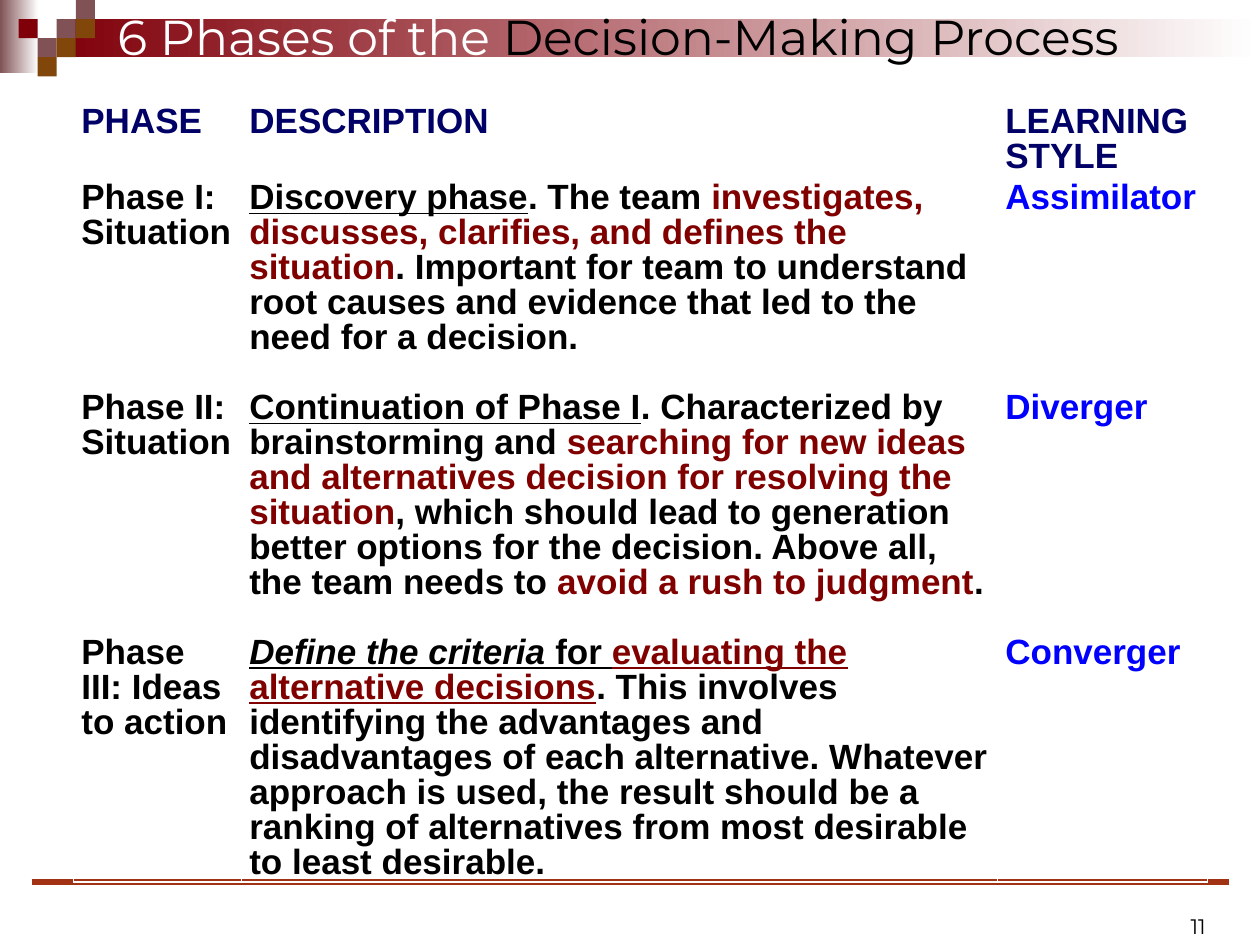
"""Build the slide on the phases of the decision-making process."""
from typing import NamedTuple

from lxml.etree import SubElement as SubEl
from pptx import Presentation as Deck
from pptx.dml.color import RGBColor as Color
from pptx.enum.shapes import MSO_CONNECTOR as Link, MSO_SHAPE as Shape
from pptx.enum.text import MSO_ANCHOR as Anchor, PP_ALIGN as Align
from pptx.oxml.ns import qn
from pptx.util import Pt

BLACK = Color(0, 0, 0)
WHITE = Color(255, 255, 255)
NAVY = Color(0, 0, 0x66)
BLUE = Color(0, 0, 255)
RED = Color(0x80, 0, 0)
WINE = Color(0x80, 0, 0x0A)
MAUVE = Color(0x80, 0x52, 0x55)
BROWN = Color(0x81, 0x46, 0x0A)
RUST = Color(0xA1, 0x32, 0x14)

SIDE = 10.9
LEFT = 10.6
WIDTHS = (96, 432, 120)
HEIGHTS = (43.5, 120, 140, 140)
BODY = {"name": "Arial", "size": Pt(20), "bold": True}


class Box(NamedTuple):
    x: float
    y: float
    w: float
    h: float


class Run(NamedTuple):
    text: str
    color: Color = BLACK
    style: dict = {}


class Tile(NamedTuple):
    col: int
    row: int
    color: Color


class Phase(NamedTuple):
    name: str
    about: list[Run]
    style: str


LINED = {"underline": True}
TILES = [
    Tile(2, 1, MAUVE), Tile(3, 0, MAUVE), Tile(3, 1, BROWN), Tile(1, 2, MAUVE),
    Tile(0, 1, WINE), Tile(2, 2, BROWN), Tile(1, 3, BROWN),
]
FADES = [(Box(0, 0, 22, 42), MAUVE), (Box(32.4, 10.8, 687.6, 21.6), WINE)]
HEADS = ("PHASE", "DESCRIPTION", "LEARNING STYLE")
PHASES = [
    Phase("Phase I: Situation", [
        Run("Discovery phase", style=LINED),
        Run(". The team "),
        Run("investigates, discusses, clarifies, and defines the situation", RED),
        Run(". Important for team to understand root causes and evidence "
            "that led to the need for a decision."),
    ], "Assimilator"),
    Phase("Phase II: Situation", [
        Run("Continuation of Phase I", style=LINED),
        Run(". Characterized by brainstorming and "),
        Run("searching for new ideas and alternatives decision for "
            "resolving the situation", RED),
        Run(", which should lead to generation better options for the "
            "decision. Above all, the team needs to "),
        Run("avoid a rush to judgment", RED),
        Run("."),
    ], "Diverger"),
    Phase("Phase III: Ideas to action", [
        Run("Define the criteria ", style={"italic": True, **LINED}),
        Run("for ", style=LINED),
        Run("evaluating the alternative decisions", RED, LINED),
        Run(". This involves identifying the advantages and disadvantages of "
            "each alternative. Whatever approach is used, the result should be "
            "a ranking of alternatives from most desirable to least desirable."),
    ], "Converger"),
]


def apply(item, values: dict) -> None:
    """Set each named attribute of the item."""
    for key, value in values.items():
        setattr(item, key, value)


def write(para, runs: list[Run], font: dict) -> None:
    """Add styled runs to a paragraph."""
    for part in runs:
        run = para.add_run()
        run.text = part.text
        apply(run.font, {**font, **part.style})
        run.font.color.rgb = part.color


def block(shapes, box: Box, color: Color, fade: bool = False) -> None:
    """Draw a rectangle, plain or fading to white."""
    rect = shapes.add_shape(Shape.RECTANGLE, *map(Pt, box))
    rect.shadow.inherit = False
    rect.line.fill.background()
    if fade:
        rect.fill.gradient()
        rect.fill.gradient_angle = 0
        for stop, tone in zip(rect.fill.gradient_stops, (color, WHITE)):
            stop.color.rgb = tone
    else:
        rect.fill.solid()
        rect.fill.fore_color.rgb = color


def label(shapes, box: Box, runs: list[Run], size: float, align: Align) -> None:
    """Draw a text box set to its lower edge."""
    frame = shapes.add_textbox(*map(Pt, box)).text_frame
    apply(frame, {"word_wrap": True, "vertical_anchor": Anchor.BOTTOM})
    para = frame.paragraphs[0]
    para.alignment = align
    write(para, runs, {"name": "Montserrat", "size": Pt(size)})


def rule(shapes, x: float, y: float, end: float) -> None:
    """Draw the level line at the foot."""
    line = shapes.add_connector(Link.STRAIGHT, Pt(x), Pt(y), Pt(end), Pt(y))
    line.line.width = Pt(3)
    line.line.color.rgb = RUST
    SubEl(line._element.spPr, qn("a:effectLst"))


def chart(shapes, rows: list[list[list[Run]]]) -> None:
    """Draw the table of phases."""
    box = Box(42, 60.5, sum(WIDTHS), sum(HEIGHTS))
    grid = shapes.add_table(len(rows), len(WIDTHS), *map(Pt, box)).table
    apply(grid, {"first_row": False, "horz_banding": False})
    for col, width in zip(grid.columns, WIDTHS):
        col.width = Pt(width)
    for row, height, cells in zip(grid.rows, HEIGHTS, rows):
        row.height = Pt(height)
        for cell, runs in zip(row.cells, cells):
            cell.fill.background()
            apply(cell, {"margin_left": Pt(4.5), "margin_right": Pt(4.5),
                         "margin_top": 0, "margin_bottom": 0})
            para = cell.text_frame.paragraphs[0]
            para.line_spacing = Pt(20)
            write(para, runs, BODY)


def main() -> None:
    """Build and save the slide."""
    deck = Deck()
    apply(deck, {"slide_width": Pt(720), "slide_height": Pt(540)})
    shapes = deck.slides.add_slide(deck.slide_layouts[6]).shapes
    for box, color in FADES:
        block(shapes, box, color, fade=True)
    for tile in TILES:
        spot = Box(LEFT + tile.col * SIDE, tile.row * SIDE, SIDE, SIDE)
        block(shapes, spot, tile.color)
    rule(shapes, 18, 504, 702)
    label(shapes, Box(528, 504, 168, 36), [Run("11")], 12, Align.RIGHT)
    title = [Run("6 Phases of the ", WHITE), Run("Decision-Making Process")]
    label(shapes, Box(60, 0, 648, 41), title, 28, Align.LEFT)
    rows = [[[Run(head, NAVY)] for head in HEADS]]
    rows += [[[Run(phase.name)], phase.about, [Run(phase.style, BLUE)]]
             for phase in PHASES]
    chart(shapes, rows)
    deck.save("out.pptx")


if __name__ == "__main__":
    main()
